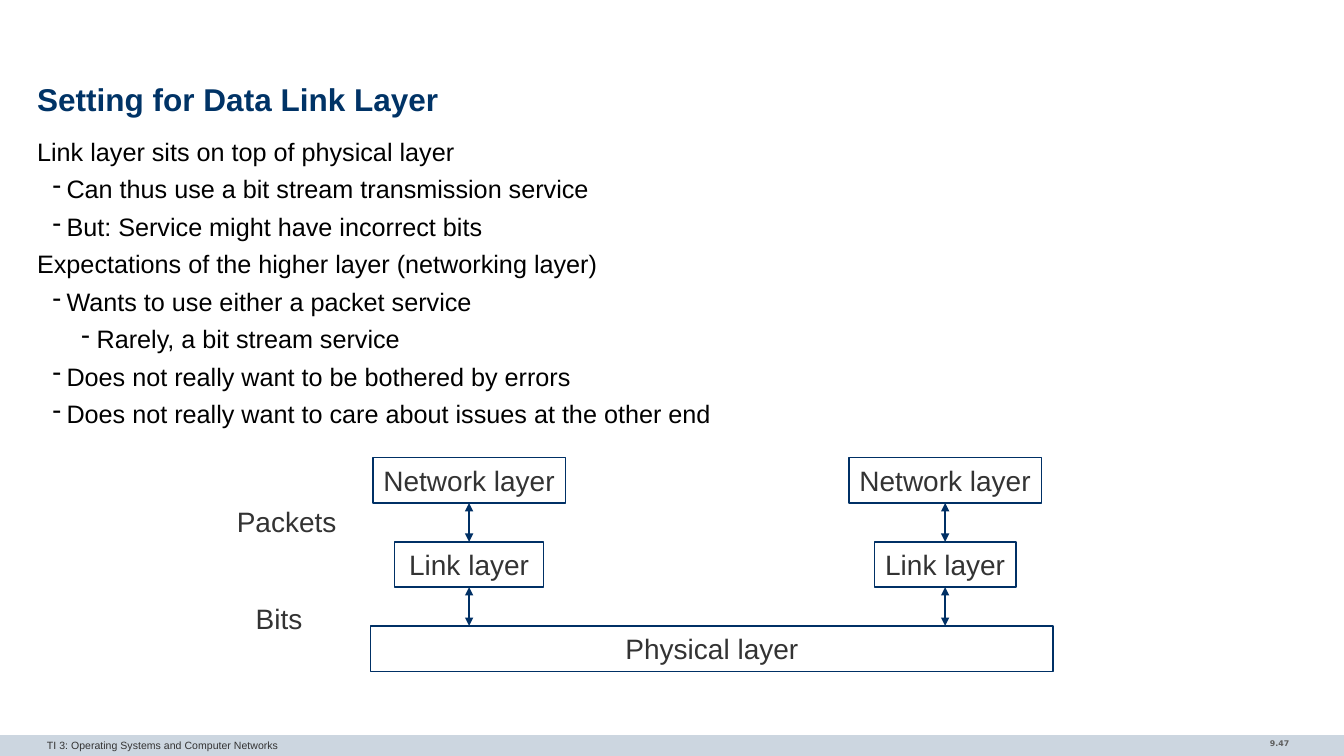
from lxml import etree
from pptx import Presentation
from pptx import util as u
from pptx.dml.color import RGBColor
from pptx.enum import shapes, text
from pptx.oxml import ns

NAVY = RGBColor(0x00, 0x33, 0x66)
LINE_BLUE = RGBColor(0x00, 0x30, 0x65)
BAND_BLUE = RGBColor(0xCC, 0xD6, 0xE0)
BLACK = RGBColor(0x00, 0x00, 0x00)
CHARCOAL = RGBColor(0x33, 0x33, 0x33)
GREY = RGBColor(0x5F, 0x5F, 0x5F)

LEFT = text.PP_ALIGN.LEFT
CENTER = text.PP_ALIGN.CENTER
RIGHT = text.PP_ALIGN.RIGHT
TOP = text.MSO_ANCHOR.TOP
MIDDLE = text.MSO_ANCHOR.MIDDLE

WIDTH, HEIGHT = 960, 540
INDENTS = {0: (0, 0), 1: (21, -10), 2: (42.5, -10.8)}
POINTS = [
    (0, "Link layer sits on top of physical layer"),
    (1, "Can thus use a bit stream transmission service"),
    (1, "But: Service might have incorrect bits"),
    (0, "Expectations of the higher layer (networking layer)"),
    (1, "Wants to use either a packet service"),
    (2, "Rarely, a bit stream service"),
    (1, "Does not really want to be bothered by errors"),
    (1, "Does not really want to care about issues at the other end"),
]


def add_bullet(para, level):
    margin, indent = INDENTS[level]
    para.level = level
    props = para._p.get_or_add_pPr()
    props.set("marL", str(u.Pt(margin)))
    props.set("indent", str(u.Pt(indent)))
    if level:
        color = etree.SubElement(props, ns.qn("a:buClr"))
        etree.SubElement(color, ns.qn("a:srgbClr")).set("val", str(BLACK))
        etree.SubElement(props, ns.qn("a:buChar")).set("char", "-")
    else:
        etree.SubElement(props, ns.qn("a:buNone"))


def write(shape, lines, size=20, color=CHARCOAL, font="Arial", bold=False,
          align=LEFT, anchor=TOP, wrap=True, inset=None, spacing=None, before=0):
    frame = shape.text_frame
    frame.word_wrap = wrap
    frame.vertical_anchor = anchor
    if inset is not None:
        frame.margin_left = frame.margin_right = u.Pt(inset)
        frame.margin_top = frame.margin_bottom = u.Pt(inset)
    for index, (level, words) in enumerate(lines):
        para = frame.add_paragraph() if index else frame.paragraphs[0]
        para.alignment = align
        para.space_before = u.Pt(before if index else 0)
        if spacing:
            para.line_spacing = spacing
        if len(lines) > 1:
            add_bullet(para, level)
        span = para.add_run()
        span.text = words
        span.font.name = font
        span.font.size = u.Pt(size)
        span.font.bold = bold
        span.font.color.rgb = color


def add_text(page, box, words, **style):
    lines = [(0, words)] if isinstance(words, str) else words
    write(page.shapes.add_textbox(*map(u.Pt, box)), lines, **style)


def add_box(page, box, words="", fill=None, line=None):
    shape = page.shapes.add_shape(shapes.MSO_SHAPE.RECTANGLE, *map(u.Pt, box))
    shape.shadow.inherit = False
    if fill is None:
        shape.fill.background()
    else:
        shape.fill.solid()
        shape.fill.fore_color.rgb = fill
    if line is None:
        shape.line.fill.background()
    else:
        shape.line.color.rgb = line
        shape.line.width = u.Pt(1)
    if words:
        write(shape, [(0, words)], align=CENTER, anchor=MIDDLE, wrap=False)


def add_arrow(page, x, top, bottom):
    arrow = page.shapes.add_connector(
        shapes.MSO_CONNECTOR.STRAIGHT, u.Pt(x), u.Pt(top), u.Pt(x), u.Pt(bottom))
    arrow.line.color.rgb = LINE_BLUE
    arrow.line.width = u.Pt(1)
    line = arrow.line._get_or_add_ln()
    for end in ("a:headEnd", "a:tailEnd"):
        etree.SubElement(line, ns.qn(end)).set("type", "triangle")
    etree.SubElement(arrow._element.spPr, ns.qn("a:effectLst"))


def add_footer(page, box):
    left, top, width, height = box
    add_box(page, box, fill=BAND_BLUE)
    add_text(page, (left + 799, top - 1, 129, 16.5), "9.47", size=5.6,
             color=GREY, font="DejaVu Sans", bold=True, align=RIGHT)
    add_text(page, (left + 26.5, top - 1, 628, 16),
             "TI 3: Operating Systems and Computer Networks", size=7.5)


def add_content(page, box):
    left, top, width, height = box
    add_text(page, (left, top, width, 34), "Setting for Data Link Layer", size=22.5,
             color=NAVY, bold=True, anchor=MIDDLE, inset=0, spacing=0.85)
    add_text(page, (left, top + 41, width, height - 41), POINTS, size=18,
             color=BLACK, inset=0, spacing=1.02, before=4.7)


def add_layers(page, box):
    left, top, width, height = box
    row_height = 32.4
    pitch = (height - row_height) / 2
    bottom = top + 2 * pitch
    add_box(page, (left, bottom, width, row_height), "Physical layer", line=LINE_BLUE)
    for offset, link_width in ((70.3, 106.5), (410.3, 101)):
        center = left + offset
        for row, (words, wide) in enumerate(
                [("Network layer", 137.5), ("Link layer", link_width)]):
            y = top + row * pitch
            add_box(page, (center - wide / 2, y, wide, row_height), words, line=LINE_BLUE)
            add_arrow(page, center, y + row_height, y + pitch)
    for words, center, y in (("Packets", 204.8, 356.5), ("Bits", 199.4, 426.2)):
        add_text(page, (center - 43, y, 86, 31), words, align=CENTER, wrap=False)


def main():
    """Build the data link layer slide."""
    deck = Presentation()
    deck.slide_width, deck.slide_height = u.Pt(WIDTH), u.Pt(HEIGHT)
    page = deck.slides.add_slide(deck.slide_layouts[6])
    add_footer(page, (0, 525, WIDTH, 15))
    add_content(page, (26.5, 56, 907, 454))
    add_layers(page, (264.8, 326.9, 487.5, 152.6))
    deck.save("out.pptx")


if __name__ == "__main__":
    main()
